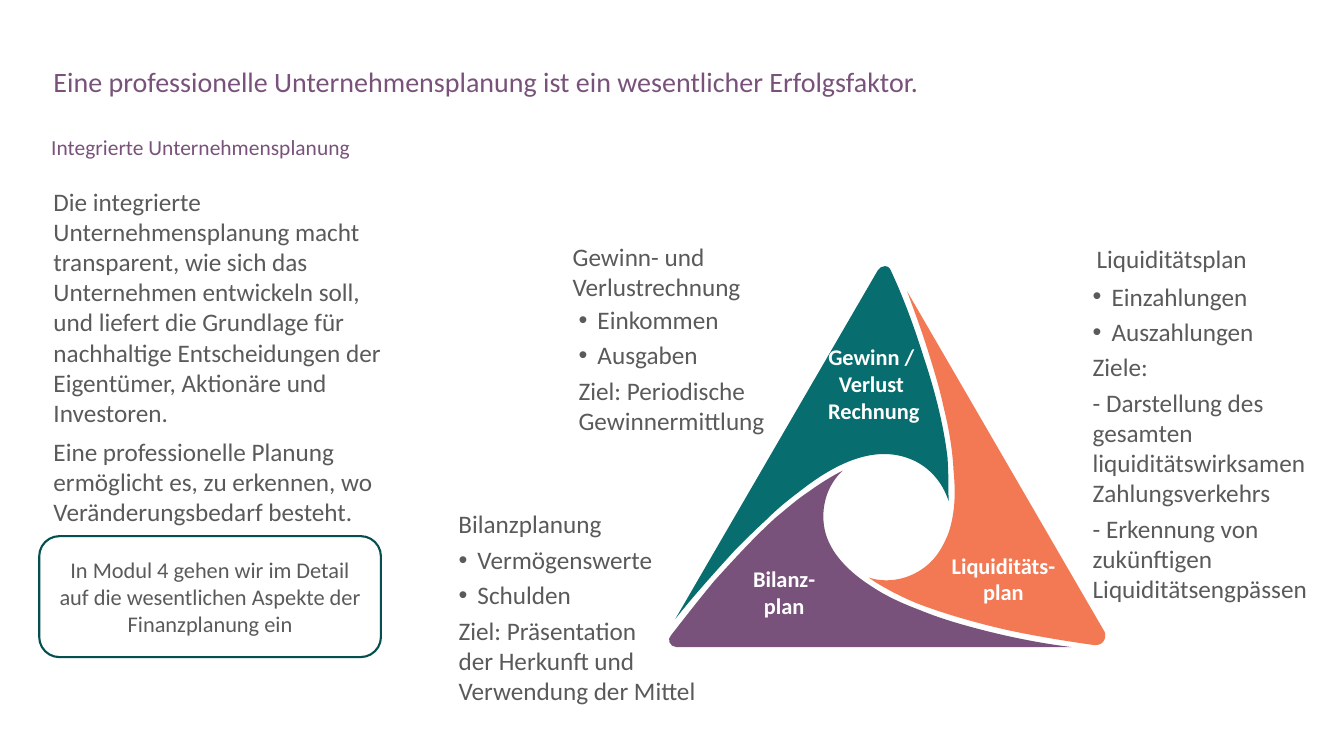
from lxml import etree
from pptx import Presentation
from pptx.dml.color import RGBColor
from pptx.enum.shapes import MSO_SHAPE
from pptx.enum.text import MSO_ANCHOR, MSO_AUTO_SIZE, PP_ALIGN
from pptx.oxml.ns import qn
from pptx.util import Pt

TOP, MIDDLE = MSO_ANCHOR.TOP, MSO_ANCHOR.MIDDLE
LEFT, CENTER = PP_ALIGN.LEFT, PP_ALIGN.CENTER
FIXED, GROWING = MSO_AUTO_SIZE.NONE, MSO_AUTO_SIZE.SHAPE_TO_FIT_TEXT
ROUNDED = MSO_SHAPE.ROUNDED_RECTANGLE

COLORS = {
    "text": "595A59", "purple": "79527B", "teal": "086D6E",
    "orange": "F27954", "frame": "054F50", "white": "FFFFFF",
}

HEADLINE = "Eine professionelle Unternehmensplanung ist ein wesentlicher Erfolgsfaktor."
SUBTITLE = "Integrierte Unternehmensplanung"
INTRO = [
    "Die integrierte Unternehmensplanung macht transparent, wie sich das Unternehmen "
    "entwickeln soll, und liefert die Grundlage für nachhaltige Entscheidungen der "
    "Eigentümer, Aktionäre und Investoren.",
    "Eine professionelle Planung ermöglicht es, zu erkennen, wo Veränderungsbedarf besteht.",
]
MODULE_HINT = ("In Modul 4 gehen wir im Detail auf die wesentlichen Aspekte "
               "der Finanzplanung ein")

PLANS = [
    {"heading": "Gewinn- und Verlustrechnung", "heading_box": (402, 168.5, 187.2, 28.8),
     "bullets": ["Einkommen", "Ausgaben"],
     "goals": ["Ziel: Periodische Gewinnermittlung"], "detail_box": (410.4, 216, 226, 98.6)},
    {"heading": "Liquiditätsplan", "heading_box": (776.2, 170.6, 149.8, 28.8),
     "bullets": ["Einzahlungen", "Auszahlungen"],
     "goals": ["Ziele:",
               "- Darstellung des gesamten liquiditätswirksamen Zahlungsverkehrs",
               "- Erkennung von zukünftigen Liquiditätsengpässen"],
     "detail_box": (777.6, 199.4, 200.9, 236.9)},
    {"heading": "Bilanzplanung", "heading_box": (320.4, 359.3, 190, 28.8),
     "bullets": ["Vermögenswerte", "Schulden"],
     "goals": ["Ziel: Präsentation \nder Herkunft und \nVerwendung der Mittel"],
     "detail_box": (324.7, 387.4, 216, 146.9)},
]

BLADES = [
    {"label": "Gewinn / \nVerlust \nRechnung", "label_box": (580.3, 241.2, 87.8, 65.5),
     "color": "teal", "outline": [
        (635.8, 192.2),
        (644.4, 210.2, 653, 233.3, 659.5, 254.2),
        (667.4, 277.9, 673.9, 302.4, 676.8, 326.9),
        (677.5, 337.7, 677.5, 347.8, 677.5, 357.8),
        (673.2, 344.2, 663.1, 332.6, 649.4, 327.6),
        (622.8, 317.5, 594.7, 332.6, 571.7, 350.6),
        (563, 357.1, 555.1, 363.6, 547.9, 370.8),
        (540, 378, 532.1, 385.9, 524.9, 393.1),
        (510.5, 409, 496.1, 424.8, 482.4, 442.1),
        (627.1, 193),
        (627.8, 191.5, 630, 190.1, 632.2, 190.1),
        (633.6, 190.1, 635, 190.8, 635.8, 192.2)]},
    {"label": "Liquiditäts-plan", "label_box": (670.3, 390.2, 92.9, 46.1),
     "color": "orange", "outline": [
        (648, 208.1),
        (653, 221.8, 658.1, 235.4, 662.4, 249.1),
        (666.7, 262.8, 671, 276.5, 673.9, 290.2),
        (677.5, 304.6, 680.4, 320.4, 681.1, 335.5),
        (682.6, 350.6, 682.6, 365.8, 677.5, 380.9),
        (674.6, 388.1, 671, 395.3, 665.3, 401),
        (653.8, 412.6, 636.5, 417.6, 620.6, 412.6),
        (626.4, 416.9, 632.2, 419.8, 638.6, 423.4),
        (644.4, 426.2, 650.2, 429.1, 655.9, 431.3),
        (676.8, 439.2, 697.7, 445, 719.3, 450),
        (739.4, 454.3, 761, 457.9, 781.9, 460.8),
        (784.8, 460.8, 787, 460.1, 788.4, 457.9),
        (789.8, 455.8, 789.8, 452.9, 789.1, 451.4)]},
    {"label": "Bilanz-\nplan", "label_box": (508.3, 399.6, 103.7, 46.1),
     "color": "purple", "outline": [
        (601.9, 336.2),
        (590.4, 347, 586.1, 362.9, 589, 378),
        (592.6, 395.3, 607, 409, 622.8, 419),
        (633.6, 426.2, 645.1, 431.3, 656.6, 435.6),
        (673.9, 442.8, 692.6, 447.8, 710.6, 452.2),
        (728.6, 456.5, 747.4, 460.1, 765.4, 462.2),
        (483.1, 462.2),
        (481, 462.2, 478.8, 460.8, 478.1, 458.6),
        (477.4, 457.2, 478.1, 455, 479.5, 453.6),
        (489.6, 440.6, 499.7, 427.7, 510.5, 414.7),
        (524.2, 399.6, 538.6, 383.8, 553.7, 370.1),
        (561.6, 363.6, 568.8, 357.1, 577.4, 351.4),
        (585.4, 345.6, 593.3, 340.6, 601.9, 336.2)]},
]

BULLET_INDENT = 13.5


def rgb(name):
    return RGBColor.from_string(COLORS[name])


def place(shape, box):
    for side, length in zip(("left", "top", "width", "height"), box):
        setattr(shape, side, Pt(length))


def set_bullet(paragraph, bulleted):
    properties = paragraph._p.get_or_add_pPr()
    indent = Pt(BULLET_INDENT) if bulleted else 0
    properties.set("marL", str(indent))
    properties.set("indent", str(-indent))
    if bulleted:
        color = etree.SubElement(properties, qn("a:buClr"))
        etree.SubElement(color, qn("a:srgbClr"), val=COLORS["text"])
        etree.SubElement(properties, qn("a:buFont"), typeface="Arial")
        etree.SubElement(properties, qn("a:buChar"), char="•")
    else:
        etree.SubElement(properties, qn("a:buNone"))


def write(shape, lines, size=18, color="text", bold=False, align=LEFT, anchor=TOP,
          inset=(7.2, 3.6), gap=0, spacing=1.0, bullets=0, fit=FIXED):
    frame = shape.text_frame
    across, down = Pt(inset[0]), Pt(inset[1])
    frame_format = {
        "word_wrap": True, "auto_size": fit, "vertical_anchor": anchor,
        "margin_left": across, "margin_right": across,
        "margin_top": down, "margin_bottom": down,
    }
    for attribute, value in frame_format.items():
        setattr(frame, attribute, value)
    for index, line in enumerate(lines):
        paragraph = frame.add_paragraph() if index else frame.paragraphs[0]
        set_bullet(paragraph, index < bullets)
        paragraph.text = line
        paragraph_format = {"alignment": align, "line_spacing": spacing,
                            "space_before": Pt(gap if index else 0)}
        for attribute, value in paragraph_format.items():
            setattr(paragraph, attribute, value)
        for run in paragraph.runs:
            for attribute, value in {"name": "Calibri", "size": Pt(size), "bold": bold}.items():
                setattr(run.font, attribute, value)
            run.font.color.rgb = rgb(color)


def add_text(parent, box, lines, **style):
    write(parent.shapes.add_textbox(*map(Pt, box)), lines, **style)


def add_blade(parent, blade):
    outline = [tuple(map(Pt, segment)) for segment in blade["outline"]]
    ends = [segment[-2:] for segment in outline]
    builder = parent.shapes.build_freeform(*ends[0])
    builder.add_line_segments(ends[1:], close=True)
    shape = builder.convert_to_shape()
    left, top = (min(axis) for axis in zip(*ends))
    sides = list(shape._element.iter(qn("a:lnTo")))
    for side, segment in zip(sides, outline[1:]):
        if len(segment) == 2:
            continue
        curve = etree.Element(qn("a:cubicBezTo"))
        for x, y in zip(segment[::2], segment[1::2]):
            etree.SubElement(curve, qn("a:pt"), x=str(x - left), y=str(y - top))
        side.getparent().replace(side, curve)
    shape.shadow.inherit = False
    shape.fill.solid()
    shape.fill.fore_color.rgb = rgb(blade["color"])
    shape.line.fill.background()


def main():
    deck = Presentation()
    deck.slide_width, deck.slide_height = Pt(960), Pt(540)
    slide = deck.slides.add_slide(deck.slide_layouts[1])

    title, intro = slide.placeholders
    place(title, (31, 45.4, 902.9, 46))
    write(title, [HEADLINE], size=20, color="purple", spacing=0.9)
    place(intro, (31, 128.9, 251.3, 251.3))
    write(intro, INTRO, anchor=MIDDLE, gap=6)
    add_text(slide, (29.5, 97.2, 904.3, 20.2), [SUBTITLE],
             size=15.3, color="purple", spacing=0.7)

    triangle = slide.shapes.add_group_shape()
    for blade in BLADES:
        add_blade(triangle, blade)
    for blade in BLADES:
        add_text(triangle, blade["label_box"], [blade["label"]], size=16, color="white",
                 bold=True, align=CENTER, anchor=MIDDLE, fit=GROWING)

    for plan in PLANS:
        add_text(slide, plan["detail_box"], plan["bullets"] + plan["goals"], fit=GROWING,
                 inset=(2.9, 1.4), gap=3.6, bullets=len(plan["bullets"]))
        add_text(slide, plan["heading_box"], [plan["heading"]], fit=GROWING)

    hint = slide.shapes.add_shape(ROUNDED, *map(Pt, (28, 383, 244.1, 86.4)))
    hint.shadow.inherit = False
    hint.fill.background()
    hint.line.color.rgb = rgb("frame")
    hint.line.width = Pt(1.5)
    write(hint, [MODULE_HINT], size=16, align=CENTER, anchor=MIDDLE)

    deck.save("out.pptx")


if __name__ == "__main__":
    main()
